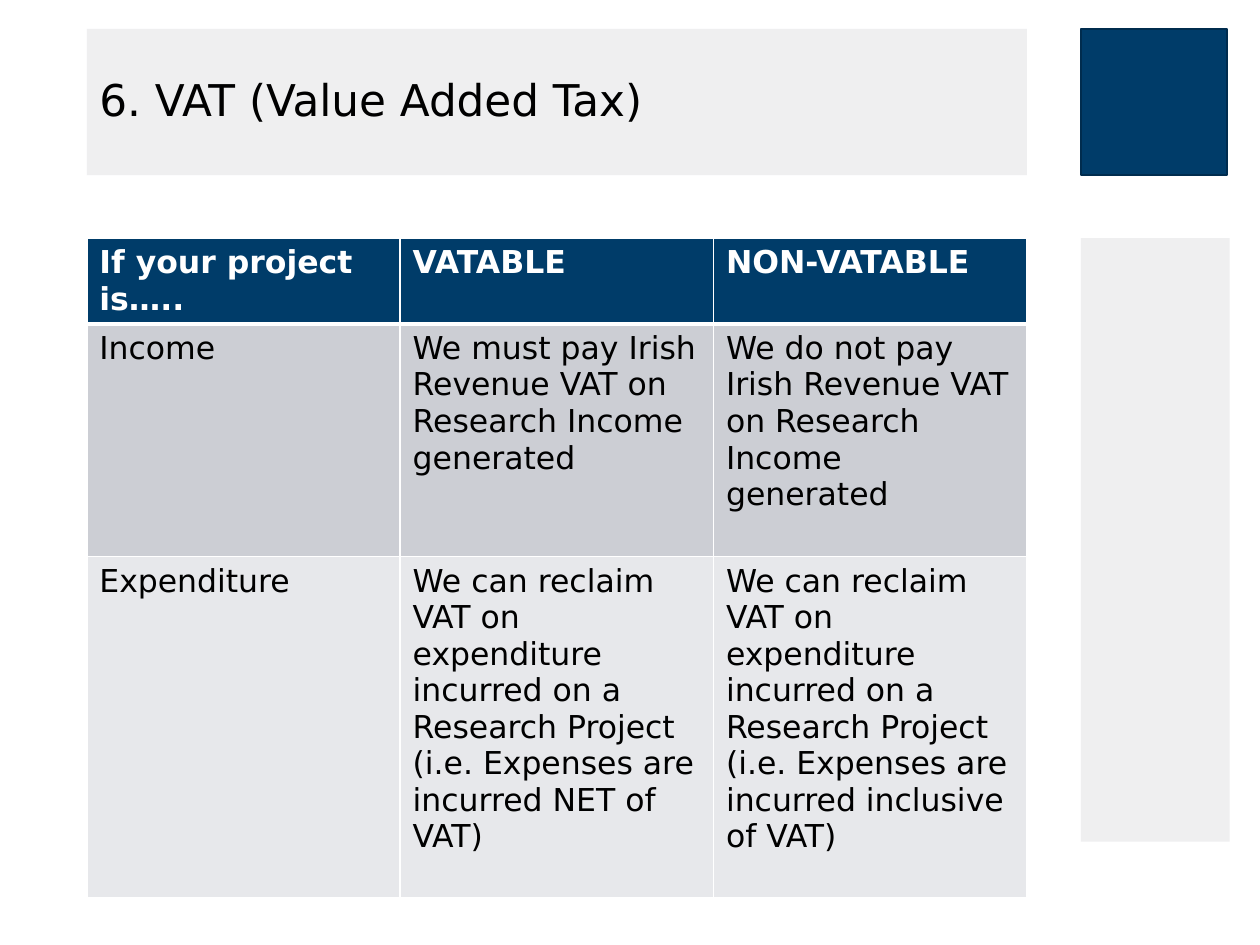
from dataclasses import dataclass

from lxml.etree import SubElement
from pptx import Presentation
from pptx.dml.color import RGBColor
from pptx.enum.shapes import MSO_SHAPE
from pptx.enum.text import MSO_ANCHOR, MSO_AUTO_SIZE, PP_ALIGN
from pptx.oxml.ns import qn
from pptx.util import Cm, Pt


@dataclass(frozen=True)
class Theme:
    font: str = "DejaVu Sans"
    navy: str = "003C69"
    navy_edge: str = "002C4E"
    panel: str = "EFEFF0"
    band_dark: str = "CCCED4"
    band_light: str = "E7E8EB"
    white: str = "FFFFFF"
    black: str = "000000"
    title_size: int = 25
    table_size: int = 18


theme = Theme()


def add_text(paragraph, text, size, color, bold=False):
    run = paragraph.add_run()
    run.text = text
    run.font.name = theme.font
    run.font.size = Pt(size)
    run.font.bold = bold
    run.font.color.rgb = RGBColor.from_string(color)


def set_borders(cell, widths):
    properties = cell._tc.get_or_add_tcPr()
    for side, width in widths.items():
        line = SubElement(properties, qn(f"a:ln{side}"), w=str(Pt(width)))
        fill = SubElement(line, qn("a:solidFill"))
        SubElement(fill, qn("a:srgbClr"), val=theme.white)


presentation = Presentation()
presentation.slide_width = Cm(25.4)
presentation.slide_height = Cm(19.05)
slide = presentation.slides.add_slide(presentation.slide_layouts[5])

left, content_width = Cm(1.75), Cm(18.95)
title_top, band_height = Cm(0.58), Cm(2.95)
table_top = Cm(4.8)

# Side column: navy square above a pale panel
side_blocks = [
    (Cm(21.79), title_top, Cm(2.95), band_height, theme.navy, theme.navy_edge),
    (Cm(21.79), table_top, Cm(3), Cm(12.17), theme.panel, None),
]
for x, y, width, height, fill, edge in side_blocks:
    shape = slide.shapes.add_shape(MSO_SHAPE.RECTANGLE, x, y, width, height)
    shape.shadow.inherit = False
    shape.fill.solid()
    shape.fill.fore_color.rgb = RGBColor.from_string(fill)
    if edge:
        shape.line.color.rgb = RGBColor.from_string(edge)
        shape.line.width = Pt(1)
    else:
        shape.line.fill.background()

# Title
title = slide.shapes.title
title.left, title.top = left, title_top
title.width, title.height = content_width, band_height
title.fill.solid()
title.fill.fore_color.rgb = RGBColor.from_string(theme.panel)
title.text_frame.auto_size = MSO_AUTO_SIZE.NONE
title.text_frame.word_wrap = True
title.text_frame.vertical_anchor = MSO_ANCHOR.MIDDLE
paragraph = title.text_frame.paragraphs[0]
paragraph.alignment = PP_ALIGN.LEFT
paragraph.line_spacing = 0.9
add_text(paragraph, "6. VAT (Value Added Tax)", theme.title_size, theme.black)

# VAT table: row height, fill, texts
rows = [
    (Cm(1.71), theme.navy, ["If your project is…..", "VATABLE", "NON-VATABLE"]),
    (Cm(4.69), theme.band_dark, [
        "Income",
        "We must pay Irish Revenue VAT on Research Income generated",
        "We do not pay Irish Revenue VAT on Research Income generated",
    ]),
    (Cm(6.88), theme.band_light, [
        "Expenditure",
        "We can reclaim VAT on expenditure incurred on a Research Project "
        "(i.e. Expenses are incurred NET of VAT)",
        "We can reclaim VAT on expenditure incurred on a Research Project "
        "(i.e. Expenses are incurred inclusive of VAT)",
    ]),
]
table_height = sum(height for height, _, _ in rows)
table = slide.shapes.add_table(
    len(rows), 3, left, table_top, content_width, table_height
).table

for row_index, (height, fill, texts) in enumerate(rows):
    is_header = row_index == 0
    table.rows[row_index].height = height
    for column_index, text in enumerate(texts):
        cell = table.cell(row_index, column_index)
        set_borders(cell, {
            "L": 1,
            "R": 1,
            "T": 3 if row_index == 1 else 1,
            "B": 3 if is_header else 1,
        })
        cell.fill.solid()
        cell.fill.fore_color.rgb = RGBColor.from_string(fill)
        color = theme.white if is_header else theme.black
        add_text(cell.text_frame.paragraphs[0], text, theme.table_size, color, is_header)

presentation.save("out.pptx")
